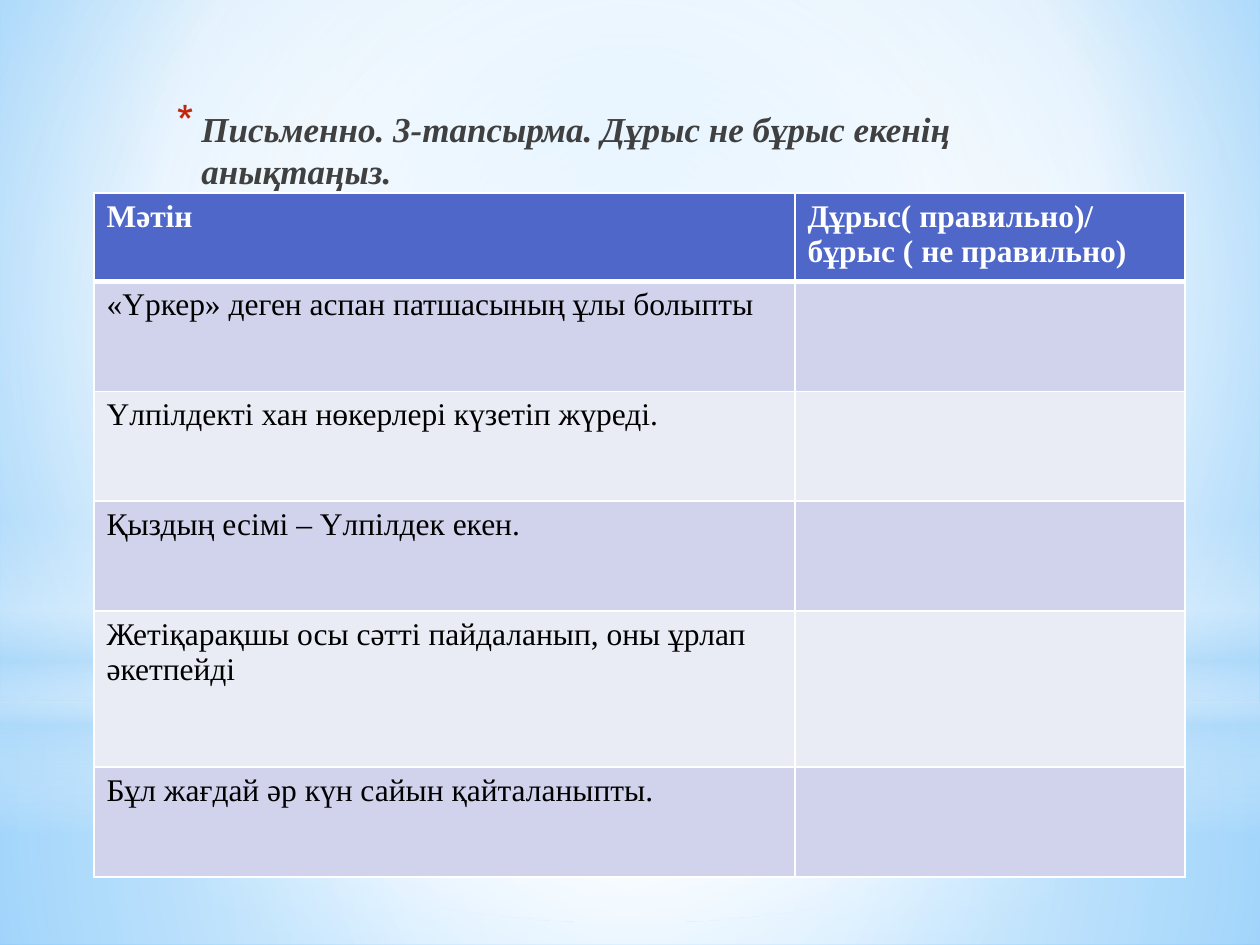
from lxml.etree import SubElement
from pptx import Presentation
from pptx.dml.color import RGBColor
from pptx.enum.shapes import MSO_SHAPE
from pptx.oxml.ns import qn
from pptx.util import Pt

RECT, OVAL = MSO_SHAPE.RECTANGLE, MSO_SHAPE.OVAL
PX = 914400 // 126
FONT = "Times New Roman"
HUES = {
    "white": "FFFFFF", "black": "000000", "grey": "404040", "red": "C3260C",
    "sky": "9ED5FF", "blue": "5BB9FF", "pale": "B4DCFA",
    "head": "4E67C8", "odd": "D0D3EB", "even": "E9EBF5",
}
MID = (50, 50, 50, 50)
GLOWS = [
    (RECT, (0, 703, 1260, 242), [(0, "white", 91), (37, "white", 76), (100, "pale", 79)], MID),
    (RECT, (0, 0, 1260, 703), [(0, "white", 89), (48, "white", 62), (100, "pale", 79)], MID),
    (RECT, (0, 519, 1260, 315), [(0, "white", 0), (29, "white", 30), (45, "pale", 40),
                                 (55, "white", 26), (65, "pale", 60), (100, "white", 0)], None),
    (OVAL, (0, 220, 1260, 703), [(0, "white", 100), (56, "white", 0)], MID),
]
ROWS = [
    ("Мәтін", "Дұрыс( правильно)/ бұрыс ( не правильно)"),
    ("«Үркер» деген аспан патшасының ұлы болыпты", ""),
    ("Үлпілдекті хан нөкерлері күзетіп жүреді.", ""),
    ("Қыздың есімі – Үлпілдек екен.", ""),
    ("Жетіқарақшы осы сәтті пайдаланып, оны ұрлап әкетпейді", ""),
    ("Бұл жағдай әр күн сайын қайталаныпты.", ""),
]


def node(base, tag, **attrs):
    """Add a drawing element with its attributes."""
    return SubElement(base, qn("a:" + tag), {k: str(v) for k, v in attrs.items()})


def write(frame, text, size=18, hue="black", bold=False, italic=False):
    """Write formatted text into the first paragraph of a frame."""
    para = frame.paragraphs[0]
    run = para.add_run()
    run.text = text
    font = run.font
    font.name, font.size, font.bold, font.italic = FONT, Pt(size), bold, italic
    font.color.rgb = RGBColor.from_string(HUES[hue])
    return para


class Board:
    """Hold the style and the current slide."""

    def __init__(self, wide, high):
        """Start a deck with one blank slide."""
        self.deck = Presentation()
        self.deck.slide_width, self.deck.slide_height = wide * PX, high * PX
        self.slide = self.deck.slides.add_slide(self.deck.slide_layouts[6])

    def blend(self, fill, owner, stops, focus):
        """Give a fill a round gradient, or a downward one without focus."""
        fill.gradient()
        grad = owner.find(".//" + qn("a:gradFill"))
        grad.clear()
        group = node(grad, "gsLst")
        for pos, hue, alpha in stops:
            stop = node(group, "gs", pos=pos * 1000)
            tint = node(stop, "srgbClr", val=HUES[hue])
            if alpha < 100:
                node(tint, "alpha", val=alpha * 1000)
        if focus:
            sides = {side: share * 1000 for side, share in zip("ltrb", focus)}
            node(node(grad, "path", path="circle"), "fillToRect", **sides)
        else:
            node(grad, "lin", ang=90 * 60000, scaled=0)

    def back(self, stops, focus):
        """Paint the slide background."""
        self.blend(self.slide.background.fill, self.slide.element, stops, focus)

    def glow(self, kind, box, stops, focus):
        """Add a soft shape without outline."""
        shape = self.slide.shapes.add_shape(kind, *(n * PX for n in box))
        shape.shadow.inherit = False
        shape.line.fill.background()
        self.blend(shape.fill, shape.element, stops, focus)

    def point(self, box, text, **style):
        """Add a text box with one starred point."""
        frame = self.slide.shapes.add_textbox(*(n * PX for n in box)).text_frame
        frame.word_wrap = True
        para = write(frame, text, **style)
        para.space_before, para.space_after = Pt(4), Pt(3)
        props = para._p.get_or_add_pPr()
        props.set("marL", str(32 * PX))
        props.set("indent", str(-25 * PX))
        node(node(props, "buClr"), "srgbClr", val=HUES["red"])
        node(props, "buSzPct", val=130000)
        node(props, "buChar", char="*")

    def cell(self, cell, text, tint, base, **style):
        """Fill, frame and write one table cell."""
        props = cell._tc.get_or_add_tcPr()
        for side, width in zip("LRTB", (1, 1, 1, base)):
            line = node(props, "ln" + side, w=int(Pt(width)))
            node(node(line, "solidFill"), "srgbClr", val=HUES["white"])
        cell.fill.solid()
        cell.fill.fore_color.rgb = RGBColor.from_string(HUES[tint])
        write(cell.text_frame, text, **style)

    def table(self, left, top, cols, highs, rows):
        """Add a banded table with a bold head row."""
        box = (left, top, sum(cols), sum(highs))
        grid = self.slide.shapes.add_table(
            len(rows), len(cols), *(n * PX for n in box)).table
        for col, wide in zip(grid.columns, cols):
            col.width = wide * PX
        for i, (row, high, texts) in enumerate(zip(grid.rows, highs, rows)):
            row.height = high * PX
            for cell, text in zip(row.cells, texts):
                if i == 0:
                    self.cell(cell, text, "head", 3, hue="white", bold=True)
                else:
                    self.cell(cell, text, "odd" if i % 2 else "even", 1)


def main():
    """Build the slide and save it."""
    board = Board(1260, 945)
    board.back([(0, "sky", 100), (60, "white", 100), (100, "blue", 100)], (20, 10, 20, 60))
    for glow in GLOWS:
        board.glow(*glow)
    board.point((157, 101, 882, 479),
                "Письменно. 3-тапсырма. Дұрыс не бұрыс екенің анықтаңыз.",
                size=20, hue="grey", bold=True, italic=True)
    board.table(94, 193, (701, 390), (81, 110, 110, 110, 156, 110), ROWS)
    board.deck.save("out.pptx")


if __name__ == "__main__":
    main()
